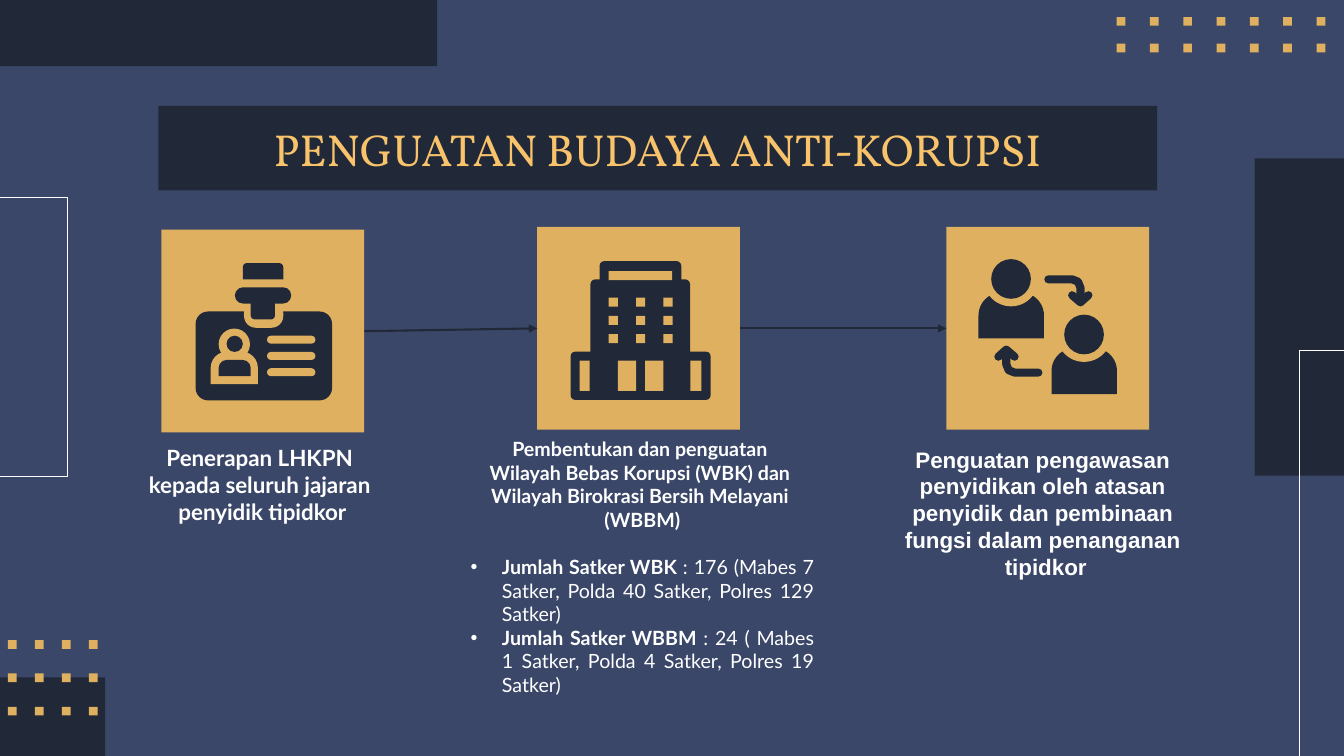
from lxml import etree
from pptx import Presentation
from pptx import util as u
from pptx.dml.color import RGBColor
from pptx.enum import shapes, text
from pptx.oxml.ns import qn

COLORS = {"blue": "3A4769", "navy": "212838", "gold": "DFB05F",
          "title": "F8C36A", "white": "FFFFFF"}
RECT = shapes.MSO_SHAPE.RECTANGLE
OVAL = shapes.MSO_SHAPE.OVAL
ROUND = shapes.MSO_SHAPE.ROUNDED_RECTANGLE
ROUND_TOP = shapes.MSO_SHAPE.ROUND_2_SAME_RECTANGLE
CENTER, JUSTIFY = text.PP_ALIGN.CENTER, text.PP_ALIGN.JUSTIFY


def rgb(name):
    return RGBColor.from_string(COLORS[name])


class Deck:
    """Style and drawing methods for the current slide; lengths in cm."""

    def __init__(self):
        self.prs = Presentation()
        self.prs.slide_width, self.prs.slide_height = u.Cm(33.87), u.Cm(19.05)
        self.slide = self.prs.slides.add_slide(self.prs.slide_layouts[6])
        self.slide.background.fill.solid()
        self.slide.background.fill.fore_color.rgb = rgb("blue")
        self.shapes = self.slide.shapes

    def block(self, x, y, w, h, color="navy", kind=RECT, corner=None):
        block = self.shapes.add_shape(kind, u.Cm(x), u.Cm(y), u.Cm(w), u.Cm(h))
        block.shadow.inherit = False
        block.fill.solid()
        block.fill.fore_color.rgb = rgb(color)
        block.line.fill.background()
        if corner is not None:
            block.adjustments[0] = corner
        return block

    def grid(self, x, y, columns, rows, dx, dy, size=0.22):
        for row in range(rows):
            for column in range(columns):
                self.block(x + column * dx, y + row * dy, size, size, "gold")

    def stroke(self, points, color, width, cap="flat"):
        (x, y), *rest = points
        builder = self.shapes.build_freeform(u.Cm(x), u.Cm(y))
        builder.add_line_segments([(u.Cm(px), u.Cm(py)) for px, py in rest], close=False)
        outline = builder.convert_to_shape()
        outline.shadow.inherit = False
        outline.fill.background()
        outline.line.color.rgb = rgb(color)
        outline.line.width = u.Pt(width)
        ln = outline.line._get_or_add_ln()
        ln.set("cap", cap)
        if cap == "rnd":
            etree.SubElement(ln, qn("a:round"))

    def arrow(self, start, end):
        arrow = self.shapes.add_connector(shapes.MSO_CONNECTOR.STRAIGHT, 0, 0, 0, 0)
        arrow.begin_connect(start, 3)
        arrow.end_connect(end, 1)
        arrow.line.color.rgb = rgb("navy")
        arrow.line.width = u.Pt(1.5)
        etree.SubElement(arrow.line._get_or_add_ln(), qn("a:tailEnd"), type="triangle")
        etree.SubElement(arrow._element.spPr, qn("a:effectLst"))

    def frame(self, shape, anchor):
        frame = shape.text_frame
        frame.word_wrap = True
        frame.vertical_anchor = anchor
        frame.margin_left = frame.margin_right = u.Cm(0.33)
        frame.margin_top = frame.margin_bottom = u.Cm(0.33)
        return frame

    def format(self, run, font, size, color="white", bold=True):
        run.font.name, run.font.size, run.font.bold = font, u.Pt(size), bold
        run.font.color.rgb = rgb(color)

    def heading(self, x, y, w, h, words):
        frame = self.frame(self.block(x, y, w, h), text.MSO_ANCHOR.MIDDLE)
        frame.text = words
        frame.paragraphs[0].alignment = CENTER
        self.format(frame.paragraphs[0].runs[0], "Vollkorn", 32, "title", False)

    def caption(self, x, y, w, h, lines, font, size):
        box = self.shapes.add_textbox(u.Cm(x), u.Cm(y), u.Cm(w), u.Cm(h))
        frame = self.frame(box, text.MSO_ANCHOR.TOP)
        frame.text = "\n".join(lines)
        for line in frame.paragraphs:
            line.alignment = CENTER
            self.format(line.runs[0], font, size)
        return frame

    def bullet(self, frame, label, detail, font, size, gap=0):
        item = frame.add_paragraph()
        item.alignment = JUSTIFY
        item.space_before = u.Pt(gap)
        for words, bold in ((label, True), (detail, False)):
            run = item.add_run()
            run.text = words
            self.format(run, font, size, bold=bold)
        props = item._p.get_or_add_pPr()
        props.set("marL", str(u.Cm(0.79)))
        props.set("indent", str(-u.Cm(0.79)))
        etree.SubElement(props, qn("a:buFont"), typeface="Arial")
        etree.SubElement(props, qn("a:buChar"), char="•")


def badge_icon(deck):
    deck.block(4.93, 7.85, 3.44, 2.24, kind=ROUND, corner=0.14)
    # Clip
    deck.block(6.15, 7.6, 0.99, 0.66, "gold", ROUND, 0.45)
    deck.block(6.32, 7.5, 0.61, 0.55, kind=ROUND, corner=0.18)
    deck.block(5.92, 7.24, 1.42, 0.41, kind=ROUND, corner=0.5)
    deck.block(6.12, 6.63, 1.02, 0.41, kind=ROUND_TOP, corner=0.25)
    # Portrait and text lines
    deck.block(5.31, 8.86, 1.19, 0.82, "gold", ROUND_TOP, 0.5)
    deck.block(5.51, 8.28, 0.79, 0.79, "gold", OVAL)
    deck.block(5.71, 8.46, 0.41, 0.41, kind=OVAL)
    deck.block(5.51, 9.07, 0.81, 0.41, kind=ROUND_TOP, corner=0.5)
    for row in range(3):
        deck.block(6.73, 8.46 + row * 0.41, 1.22, 0.2, "gold", ROUND, 0.5)


def building_icon(deck):
    deck.block(15.11, 6.58, 2.06, 0.6, kind=ROUND_TOP, corner=0.2)
    deck.block(14.88, 7.04, 2.51, 2, kind=ROUND_TOP, corner=0.06)
    deck.block(14.38, 8.86, 3.53, 1.22, kind=ROUND, corner=0.1)
    deck.block(15.34, 6.83, 1.6, 0.23, "gold")
    deck.grid(15.34, 7.5, 3, 3, 0.69, 0.46, 0.23)
    for x, width in ((14.61, 0.25), (15.57, 0.46), (16.26, 0.46), (17.4, 0.28)):
        deck.block(x, 9.09, width, 0.76, "gold")


def people_icon(deck):
    for x, y in ((24.66, 6.53), (26.5, 7.93)):
        deck.block(x, y + 0.84, 1.65, 1.16, kind=ROUND_TOP, corner=0.5)
        deck.block(x + 0.13, y - 0.19, 1.38, 1.38, "gold", OVAL)
        deck.block(x + 0.32, y, 1, 1, kind=OVAL)
    # The second arrow is the first one turned by half a circle
    shaft = [(26.42, 7.04), (27.02, 7.04), (27.17, 7.1), (27.23, 7.25), (27.23, 7.6)]
    head = [(27.02, 7.44), (27.23, 7.62), (27.43, 7.44)]
    for points in (shaft, head):
        turned = [(52.59 - x, 16.43 - y) for x, y in points]
        for path_points in (points, turned):
            deck.stroke(path_points, "navy", 5.75, "rnd")


def main():
    deck = Deck()

    # Backdrop
    deck.block(0, 17.07, 2.65, 1.98)
    deck.block(0, 0, 11.02, 1.67)
    deck.block(31.62, 3.99, 2.25, 8)
    deck.stroke([(0, 4.98), (1.71, 4.98), (1.71, 12.02), (0, 12.02)], "white", 0.75)
    deck.stroke([(32.75, 19.05), (32.75, 8.84), (33.87, 8.84)], "white", 0.75)
    deck.grid(28.14, 0.43, 7, 2, 0.84, 0.67)
    deck.grid(0.2, 16.13, 4, 3, 0.68, 0.84)

    # Title
    deck.heading(3.99, 2.67, 25.17, 2.13, "PENGUATAN BUDAYA ANTI-KORUPSI")

    # Captions
    zones = deck.caption(11.53, 10.69, 9.32, 8.08, [
        "Pembentukan dan penguatan ", "Wilayah Bebas Korupsi (WBK) dan ",
        "Wilayah Birokrasi Bersih Melayani ", "(WBBM)"], "Lato", 14)
    deck.bullet(zones, "Jumlah Satker WBK ",
                ": 176 (Mabes 7 Satker, Polda 40 Satker, Polres 129 Satker)", "Lato", 14, 17)
    deck.bullet(zones, "Jumlah Satker WBBM ",
                ": 24 ( Mabes 1 Satker, Polda 4 Satker, Polres 19 Satker)", "Lato", 14)
    deck.caption(2.59, 10.87, 8.05, 7.52, [
        "Penerapan LHKPN ", "kepada seluruh jajaran ", "penyidik tipidkor"], "Lato", 16)
    deck.caption(22.33, 10.9, 8.05, 7.47, [
        "Penguatan pengawasan ", "penyidikan oleh atasan ", "penyidik dan pembinaan ",
        "fungsi dalam penanganan ", "tipidkor"], "Arial", 16)

    # Steps and the arrows between them
    report, zone, oversight = [deck.block(x, y, 5.11, 5.11, "gold")
                               for x, y in ((4.07, 5.79), (13.54, 5.72), (23.85, 5.72))]
    deck.arrow(report, zone)
    deck.arrow(zone, oversight)

    # Icons
    badge_icon(deck)
    building_icon(deck)
    people_icon(deck)

    deck.prs.save("out.pptx")


if __name__ == "__main__":
    main()
